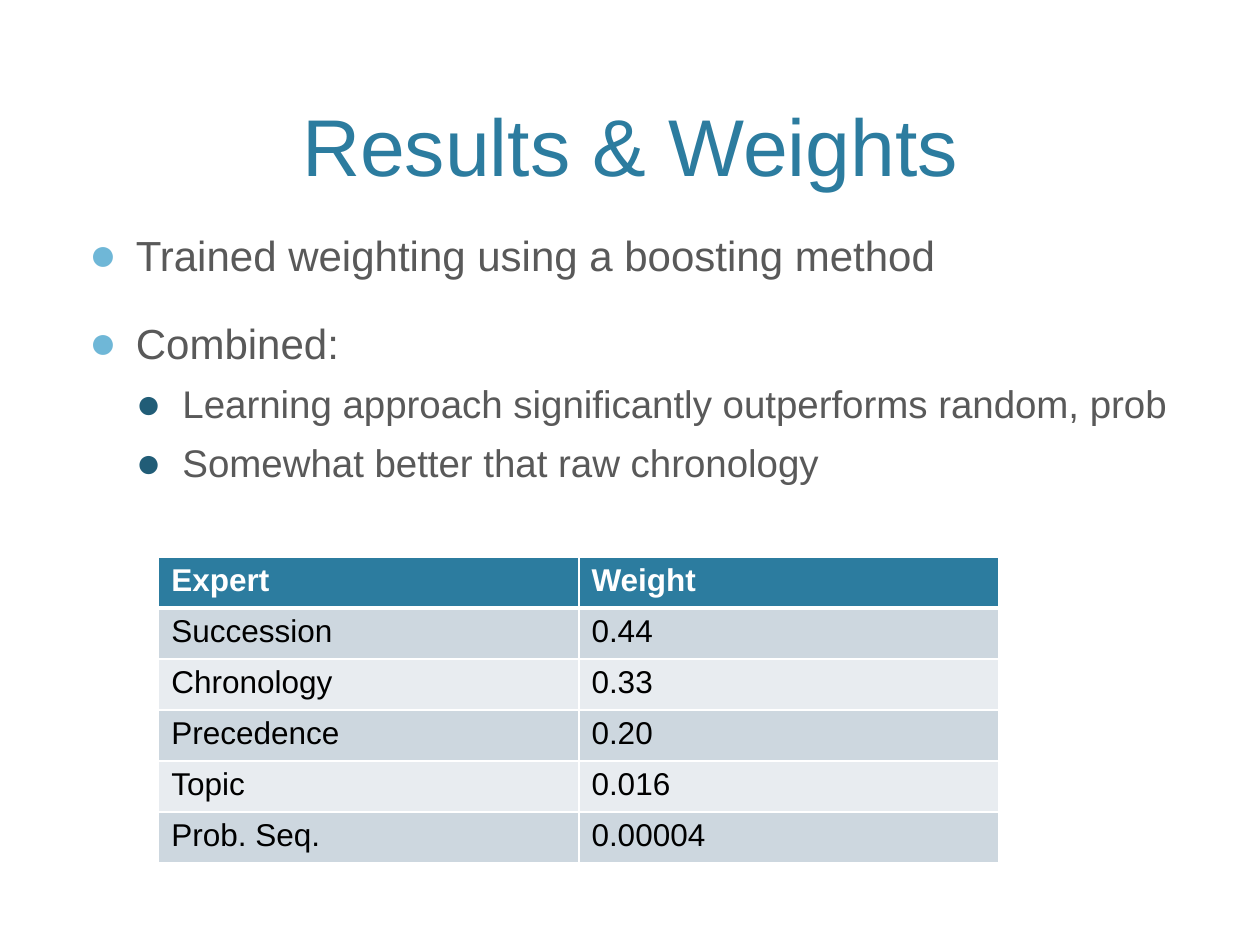
"""Build the Results & Weights slide with bullets and a table of expert weights."""
from lxml.etree import SubElement
from pptx import Presentation
from pptx.dml.color import RGBColor
from pptx.enum.text import MSO_ANCHOR, PP_ALIGN
from pptx.oxml.ns import qn
from pptx.util import Inches, Pt

COLORS = {
    "accent": "2C7C9F", "text": "595959", "bullet": "6FB7D7", "sub_bullet": "215D77",
    "white": "FFFFFF", "black": "000000", "band_dark": "CDD7DF", "band_light": "E8ECF0",
}
BULLETS = [
    (0, "Trained weighting using a boosting method"),
    (0, "Combined:"),
    (1, "Learning approach significantly outperforms random, prob"),
    (1, "Somewhat better that raw chronology"),
]
LEVELS = [
    {"margin": 0.38, "before": 20, "size": 24, "bullet": "bullet"},
    {"margin": 0.75, "before": 6, "size": 22, "bullet": "sub_bullet"},
]
ROWS = [
    ("Expert", "Weight"), ("Succession", "0.44"), ("Chronology", "0.33"),
    ("Precedence", "0.20"), ("Topic", "0.016"), ("Prob. Seq.", "0.00004"),
]


def set_font(paragraph, size, color, bold=False):
    font = paragraph.font
    font.name, font.size, font.bold = "Arial", Pt(size), bold
    font.color.rgb = RGBColor.from_string(COLORS[color])


def add_color(parent, color):
    SubElement(parent, qn("a:srgbClr"), val=COLORS[color])


presentation = Presentation()
presentation.slide_width, presentation.slide_height = Inches(10), Inches(7.5)
slide = presentation.slides.add_slide(presentation.slide_layouts[6])

title = slide.shapes.add_textbox(Inches(0.6), Inches(0.12), Inches(8.8), Inches(1.46))
title.text_frame.word_wrap = True
title.text_frame.vertical_anchor = MSO_ANCHOR.BOTTOM
heading = title.text_frame.paragraphs[0]
heading.text = "Results & Weights"
heading.alignment = PP_ALIGN.CENTER
set_font(heading, 46, "accent")

body = slide.shapes.add_textbox(Inches(0.6), Inches(1.75), Inches(8.8), Inches(4.75))
body.text_frame.word_wrap = True
for index, (level, text) in enumerate(BULLETS):
    style = LEVELS[level]
    paragraph = body.text_frame.add_paragraph() if index else body.text_frame.paragraphs[0]
    paragraph.text = text
    paragraph.level = level
    paragraph.line_spacing = 1.05
    paragraph.space_before = Pt(style["before"])
    properties = paragraph._p.get_or_add_pPr()
    properties.set("marL", str(Inches(style["margin"])))
    properties.set("indent", str(Inches(-0.37)))
    add_color(SubElement(properties, qn("a:buClr")), style["bullet"])
    SubElement(properties, qn("a:buSzPct"), val="110000")
    SubElement(properties, qn("a:buFont"), typeface="Arial")
    SubElement(properties, qn("a:buChar"), char="●")
    set_font(paragraph, style["size"], "text")

table = slide.shapes.add_table(
    len(ROWS), 2, Inches(1.26), Inches(4.42), Inches(6.67), Inches(2.43)
).table
for row_index, row in enumerate(ROWS):
    header = row_index == 0
    fill = "accent" if header else "band_dark" if row_index % 2 else "band_light"
    for column_index, text in enumerate(row):
        cell = table.cell(row_index, column_index)
        cell.text = text
        set_font(cell.text_frame.paragraphs[0], 18, "white" if header else "black", header)
        properties = cell._tc.get_or_add_tcPr()
        for side in ("L", "R", "T", "B"):
            thick = (header and side == "B") or (row_index == 1 and side == "T")
            border = SubElement(properties, qn(f"a:ln{side}"), w=str(Pt(3 if thick else 1)))
            add_color(SubElement(border, qn("a:solidFill")), "white")
        cell.fill.solid()
        cell.fill.fore_color.rgb = RGBColor.from_string(COLORS[fill])

presentation.save("out.pptx")
